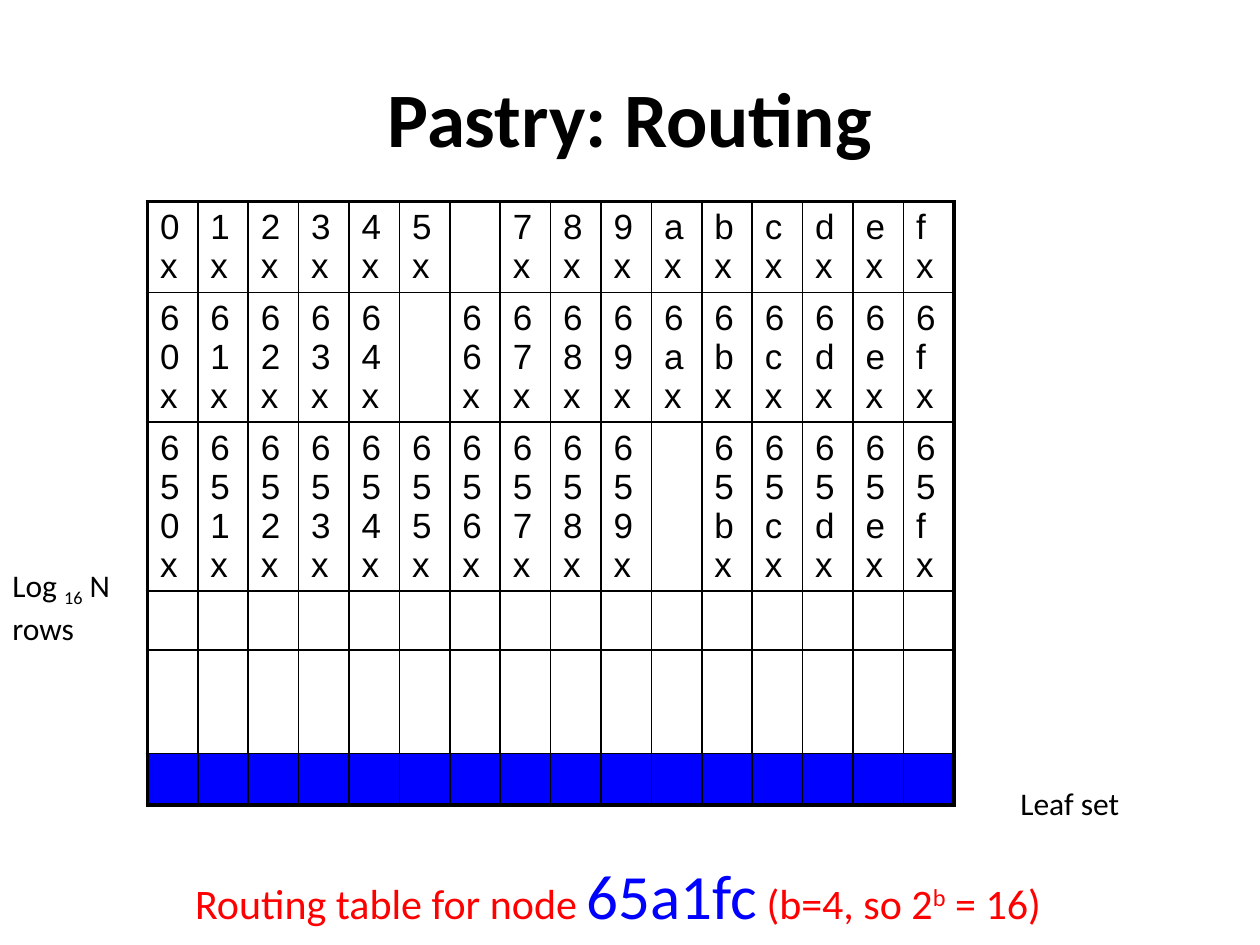
from dataclasses import dataclass
from typing import NamedTuple

from lxml.etree import SubElement
from pptx import Presentation
from pptx.dml.color import RGBColor
from pptx.enum.text import MSO_ANCHOR, MSO_AUTO_SIZE, PP_ALIGN
from pptx.oxml.ns import qn
from pptx.util import Inches, Pt


@dataclass(frozen=True)
class Theme:
    font: str = "Calibri"
    table_font: str = "Arial"
    black: RGBColor = RGBColor(0x00, 0x00, 0x00)
    red: RGBColor = RGBColor(0xFF, 0x00, 0x00)
    blue: RGBColor = RGBColor(0x00, 0x00, 0xFF)
    title: int = 44
    node: int = 36
    caption: int = 24
    cell: int = 20
    label: int = 18
    outer_line: float = 2.25
    inner_line: float = 1


THEME = Theme()


class Span(NamedTuple):
    text: str
    size: int = THEME.label
    color: RGBColor = THEME.black
    bold: bool = False
    baseline: int = 0  # percent: positive is superscript, negative subscript


class Label(NamedTuple):
    box: tuple[float, float, float, float]
    lines: list[list[Span]]
    align: PP_ALIGN = PP_ALIGN.LEFT
    wrap: bool = False


LABELS = [
    Label((0.5, 0.3, 9, 1.25), [[Span("Pastry: Routing", THEME.title, bold=True)]],
          PP_ALIGN.CENTER, wrap=True),
    Label((1.45, 6.74, 7, 0.71), [[
        Span("Routing table for node ", THEME.caption, THEME.red),
        Span("65a1fc", THEME.node, THEME.blue),
        Span(" (b=4, so 2", THEME.caption, THEME.red),
        Span("b", THEME.caption, THEME.red, baseline=30),
        Span(" = 16)", THEME.caption, THEME.red),
    ]]),
    Label((8, 6.12, 1.27, 0.5), [[Span("Leaf set")]]),
    Label((0, 4.36, 1.37, 0.9),
          [[Span("Log "), Span("16", baseline=-25), Span(" N")], [Span("rows")]]),
]

DIGITS = "0123456789abcdef"
NODE_PREFIX = "65a"
ROW_HEIGHTS = [0.72, 1.03, 1.34, 0.47, 0.82, 0.41]
COLUMN_WIDTH = 0.4
TABLE_LEFT, TABLE_TOP = 1.17, 1.6


def add_label(slide, label: Label) -> None:
    tf = slide.shapes.add_textbox(*map(Inches, label.box)).text_frame
    tf.word_wrap = label.wrap
    tf.auto_size = MSO_AUTO_SIZE.NONE if label.wrap else MSO_AUTO_SIZE.SHAPE_TO_FIT_TEXT
    tf.vertical_anchor = MSO_ANCHOR.MIDDLE
    for i, line in enumerate(label.lines):
        p = tf.add_paragraph() if i else tf.paragraphs[0]
        p.alignment = label.align
        for span in line:
            r = p.add_run()
            r.text = span.text
            style_run(r, span.size, span.color, THEME.font, span.bold)
            if span.baseline:
                r._r.get_or_add_rPr().set("baseline", str(span.baseline * 1000))


def style_run(r, size: int, color: RGBColor, font: str, bold: bool = False) -> None:
    r.font.size = Pt(size)
    r.font.name = font
    r.font.bold = bold
    r.font.color.rgb = color


def set_borders(cell, outer: dict[str, bool]) -> None:
    """Draw the four sides, heavier where the side lies on the table's edge."""
    tc_pr = cell._tc.get_or_add_tcPr()
    for side, is_outer in outer.items():
        width = THEME.outer_line if is_outer else THEME.inner_line
        ln = SubElement(tc_pr, qn(f"a:ln{side}"), w=str(Pt(width)))
        fill = SubElement(ln, qn("a:solidFill"))
        SubElement(fill, qn("a:srgbClr"), val=str(THEME.black))


def cell_text(row: int, digit: str) -> str:
    """Prefix shared with the node, one differing digit, then x."""
    if row >= len(NODE_PREFIX) or digit == NODE_PREFIX[row]:
        return ""
    return f"{NODE_PREFIX[:row]}{digit}x"


def add_routing_table(slide) -> None:
    n_rows, n_cols = len(ROW_HEIGHTS), len(DIGITS)
    table = slide.shapes.add_table(
        n_rows, n_cols, Inches(TABLE_LEFT), Inches(TABLE_TOP),
        Inches(COLUMN_WIDTH * n_cols), Inches(sum(ROW_HEIGHTS))).table
    table.first_row = table.horz_banding = False
    for column in table.columns:
        column.width = Inches(COLUMN_WIDTH)
    for row, height in enumerate(ROW_HEIGHTS):
        table.rows[row].height = Inches(height)
        last_row = row == n_rows - 1
        for col, digit in enumerate(DIGITS):
            cell = table.cell(row, col)
            set_borders(cell, {"L": col == 0, "R": col == n_cols - 1,
                               "T": row == 0, "B": last_row})
            if last_row:
                cell.fill.solid()
                cell.fill.fore_color.rgb = THEME.blue
            else:
                cell.fill.background()
            cell.text_frame.text = cell_text(row, digit)
            for r in cell.text_frame.paragraphs[0].runs:
                style_run(r, THEME.cell, THEME.black, THEME.table_font)


def main() -> None:
    prs = Presentation()
    prs.slide_width, prs.slide_height = Inches(10), Inches(7.5)
    slide = prs.slides.add_slide(prs.slide_layouts[6])
    add_routing_table(slide)
    for label in LABELS:
        add_label(slide, label)
    prs.save("out.pptx")


if __name__ == "__main__":
    main()
